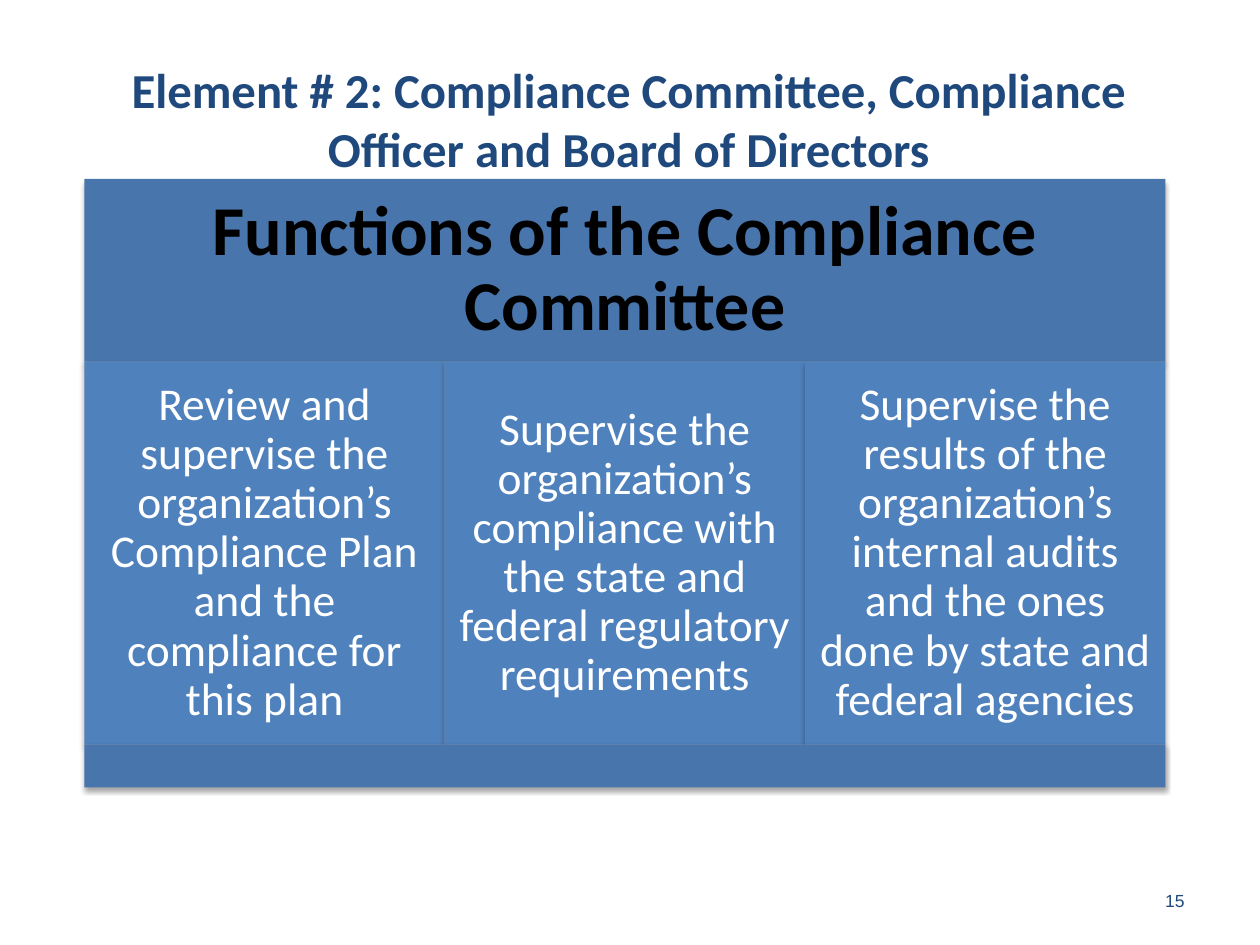
import lxml.etree
import pptx
import pptx.dml.color
import pptx.enum.shapes
import pptx.enum.text
import pptx.oxml.ns
import pptx.util

Inches = pptx.util.Inches
Pt = pptx.util.Pt
ALIGN = pptx.enum.text.PP_ALIGN

BAND = "4875AC"
PANEL = "4F81BD"
NAVY = "1F497D"
FUNCTIONS = [
    "Review and supervise the organization’s Compliance Plan and the compliance for this plan",
    "Supervise the organization’s compliance with the state and federal regulatory requirements",
    "Supervise the results of the organization’s internal audits and the ones done by state and federal agencies",
]


def color(hex_string):
    """Return the RGB colour for a hex string."""
    return pptx.dml.color.RGBColor.from_string(hex_string)


def write_text(shape, text, size, hex_color, bold=False, font="Calibri",
               align=ALIGN.CENTER, inset=0.1, spacing=1.0):
    """Write one formatted, vertically centred paragraph in a shape."""
    frame = shape.text_frame
    frame.word_wrap = True
    frame.auto_size = pptx.enum.text.MSO_AUTO_SIZE.NONE
    frame.vertical_anchor = pptx.enum.text.MSO_ANCHOR.MIDDLE
    frame.margin_left = frame.margin_right = Inches(inset)
    frame.margin_top = frame.margin_bottom = Inches(min(inset, 0.17))
    paragraph = frame.paragraphs[0]
    paragraph.alignment = align
    paragraph.line_spacing = spacing
    run = paragraph.add_run()
    run.text = text
    run.font.size = Pt(size)
    run.font.name = font
    run.font.bold = bold
    run.font.color.rgb = color(hex_color)


def add_shadow(shape):
    """Give a shape a soft shadow that falls straight down."""
    shape.shadow.inherit = False
    qn = pptx.oxml.ns.qn
    effects = shape.element.spPr.find(qn("a:effectLst"))
    shadow = lxml.etree.SubElement(
        effects, qn("a:outerShdw"), blurRad=str(Pt(3.1)), dist=str(Pt(1.8)),
        dir="5400000", rotWithShape="0")
    shade = lxml.etree.SubElement(shadow, qn("a:srgbClr"), val="000000")
    lxml.etree.SubElement(shade, qn("a:alpha"), val="35000")


def add_block(slide, left, top, width, height, fill):
    """Add a borderless filled rectangle with a shadow."""
    shape = slide.shapes.add_shape(
        pptx.enum.shapes.MSO_SHAPE.RECTANGLE,
        Inches(left), Inches(top), Inches(width), Inches(height))
    shape.fill.solid()
    shape.fill.fore_color.rgb = color(fill)
    shape.line.fill.background()
    add_shadow(shape)
    return shape


def add_title(slide, left, top, width, height):
    """Place and format the title placeholder."""
    title = slide.shapes.title
    title.left, title.top = Inches(left), Inches(top)
    title.width, title.height = Inches(width), Inches(height)
    write_text(title, "Element # 2: Compliance Committee, Compliance Officer and Board of Directors",
               27.9, NAVY, bold=True)
    title.text_frame.margin_top = Inches(0.05)
    title.text_frame.margin_bottom = Inches(0.25)


def add_functions(slide, left, top, width, height):
    """Add the heading band, the row of functions and the base band."""
    heading_height, base_height = 1.45, 0.34
    panel_height = height - heading_height - base_height
    panel_width = width / len(FUNCTIONS)
    heading = add_block(slide, left, top, width, heading_height, BAND)
    write_text(heading, "Functions of the Compliance Committee", 40, "000000",
               bold=True, inset=0.17, spacing=0.9)
    for index, function in enumerate(FUNCTIONS):
        panel = add_block(slide, left + index * panel_width, top + heading_height,
                          panel_width, panel_height, PANEL)
        write_text(panel, function, 26, "FFFFFF", inset=0.11, spacing=0.9)
    add_block(slide, left, top + height - base_height, width, base_height, BAND)


def add_page_number(slide, left, top, width, height):
    """Add the page number at the right of its box."""
    box = slide.shapes.add_textbox(Inches(left), Inches(top), Inches(width), Inches(height))
    write_text(box, "15", 10, NAVY, font="Arial", align=ALIGN.RIGHT)


def main():
    """Build and save the slide."""
    presentation = pptx.Presentation()
    presentation.slide_width = Inches(10)
    presentation.slide_height = Inches(7.5)
    slide = presentation.slides.add_slide(presentation.slide_layouts[5])
    add_page_number(slide, 7.17, 6.95, 2.33, 0.4)
    add_title(slide, 0.49, 0.5, 9, 1.08)
    add_functions(slide, 0.67, 1.42, 8.58, 4.83)
    presentation.save("out.pptx")


if __name__ == "__main__":
    main()
